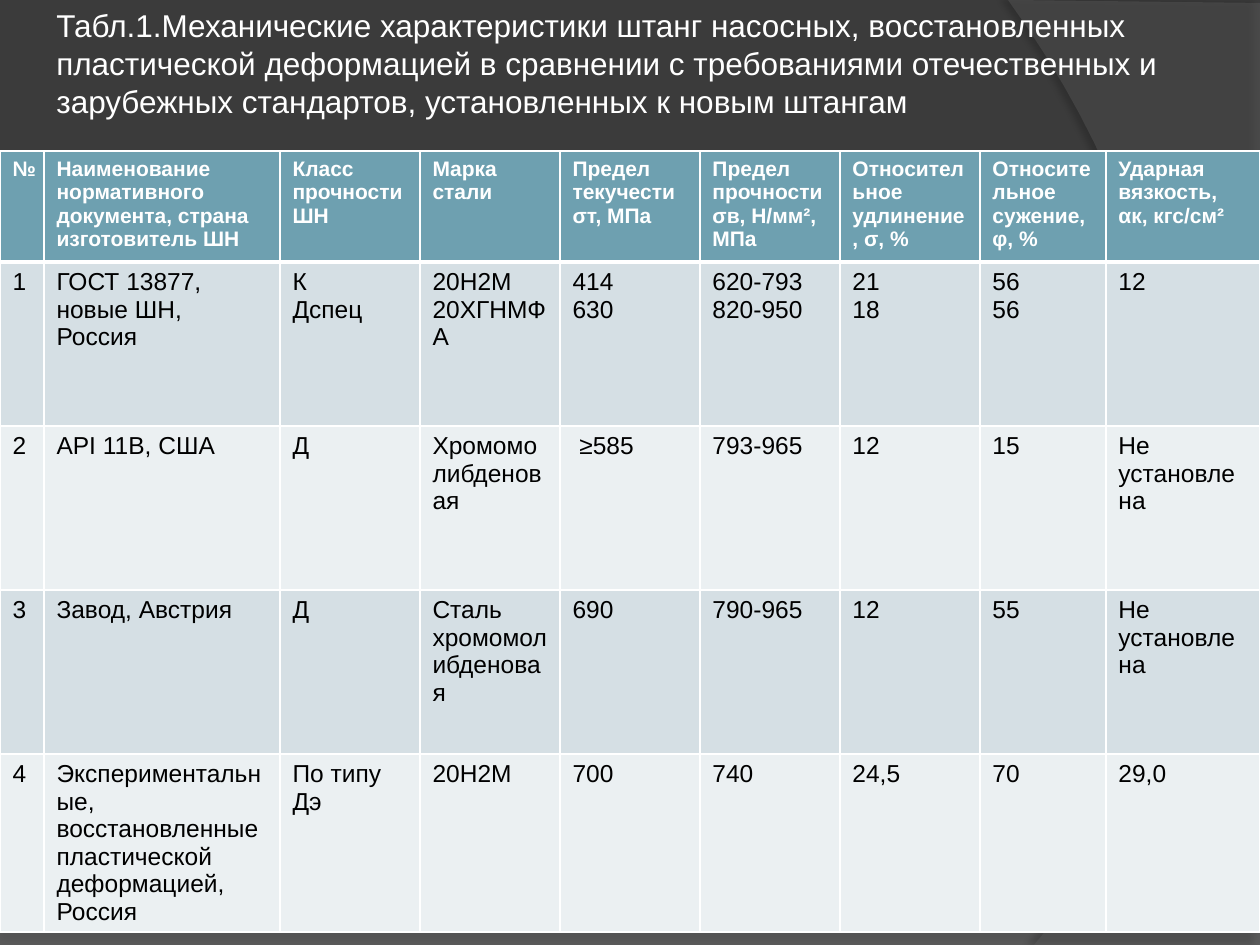
from dataclasses import dataclass

from lxml.etree import SubElement
from pptx import Presentation
from pptx.dml.color import RGBColor
from pptx.enum.text import MSO_AUTO_SIZE
from pptx.oxml.ns import qn
from pptx.util import Emu, Pt

SCALE = 914400 / 126
CURVE_STEPS = 40


@dataclass
class Backdrop:
    corners: list
    curve: list
    fill: str
    alpha: int
    shadow_alpha: int
    shadow_dist: float
    shadow_dir: int


@dataclass
class RowStyle:
    fill: str
    fmt: dict
    bottom: int = 1


BACKDROPS = [
    Backdrop([(0, 888), (0, 946), (1260, 946), (1260, 655)],
             [(704, 919), (493, 906), (0, 888)], "7F7F7F", 45, 35, 3.5, 270),
    Backdrop([(1260, 3), (1260, 945), (1034, 945)],
             [(1178, 780), (1283, 378), (1008, 0)], "5E5E5E", 40, 45, 4, 180),
]
TITLE = ("Табл.1.Механические характеристики штанг насосных, восстановленных "
         "пластической деформацией в сравнении с требованиями отечественных и "
         "зарубежных стандартов, установленных к новым штангам")
COLS = [44, 236, 140, 140, 140, 140, 140, 126, 154]
ROWS = [111, 164, 164, 164, 178]
DATA = [
    ["№", "Наименование нормативного документа, страна изготовитель ШН",
     "Класс прочности ШН", "Марка стали", "Предел текучести σт, МПа",
     "Предел прочности σв, Н/мм², МПа", "Относительное удлинение, σ, %",
     "Относительное сужение, φ, %", "Ударная вязкость, αк, кгс/см²"],
    ["1", "ГОСТ 13877, новые ШН, Россия", "К\nДспец", "20Н2М\n20ХГНМФА",
     "414\n630", "620-793\n820-950", "21\n18", "56\n56", "12"],
    ["2", "API 11B, США", "Д", "Хромомолибденовая", " ≥585", "793-965",
     "12", "15", "Не установлена"],
    ["3", "Завод, Австрия", "Д", "Сталь хромомолибденовая", "690", "790-965",
     "12", "55", "Не установлена"],
    ["4", "Экспериментальные, восстановленные пластической деформацией, Россия",
     "По типу\nДэ", "20Н2М", "700", "740", "24,5", "70", "29,0"],
]


def px(n: float) -> Emu:
    return Emu(round(n * SCALE))


def rgb(value: str) -> RGBColor:
    return RGBColor.from_string(value)


def text_format(size: int, color: str, bold: bool = False) -> dict:
    return {"size": Pt(size), "name": "Arial", "bold": bold, "color": color}


def write(tf, text: str, fmt: dict) -> None:
    tf.text = text
    for p in tf.paragraphs:
        for r in p.runs:
            for key, value in fmt.items():
                if key == "color":
                    r.font.color.rgb = rgb(value)
                else:
                    setattr(r.font, key, value)


def add_color(parent, value: str, alpha: int = 100) -> None:
    clr = SubElement(parent, qn("a:srgbClr"), val=value)
    if alpha < 100:
        SubElement(clr, qn("a:alpha"), val=str(alpha * 1000))


def bezier(p0: tuple, p1: tuple, p2: tuple, p3: tuple) -> list:
    points = []
    for i in range(1, CURVE_STEPS + 1):
        t = i / CURVE_STEPS
        u = 1 - t
        points.append(tuple(
            u**3 * a + 3 * u * u * t * b + 3 * u * t * t * c + t**3 * d
            for a, b, c, d in zip(p0, p1, p2, p3)))
    return points


def add_backdrop(s, b: Backdrop) -> None:
    points = b.corners + bezier(b.corners[-1], *b.curve)
    fb = s.shapes.build_freeform(*map(px, points[0]), scale=1.0)
    fb.add_line_segments([(px(x), px(y)) for x, y in points[1:]], close=True)
    sp = fb.convert_to_shape()
    sp.fill.solid()
    sp.fill.fore_color.rgb = rgb(b.fill)
    clr = sp.fill._xPr.find(qn("a:solidFill"))[0]
    SubElement(clr, qn("a:alpha"), val=str(b.alpha * 1000))
    sp.line.fill.background()
    sp.shadow.inherit = False
    effects = sp._element.spPr.find(qn("a:effectLst"))
    shadow = SubElement(effects, qn("a:outerShdw"), blurRad=str(Pt(4)),
                        dist=str(Pt(b.shadow_dist)),
                        dir=str(b.shadow_dir * 60000), rotWithShape="0")
    add_color(shadow, "000000", b.shadow_alpha)


def set_borders(cell, top: int, bottom: int) -> None:
    tcPr = cell._tc.get_or_add_tcPr()
    widths = {"a:lnL": 1, "a:lnR": 1, "a:lnT": top, "a:lnB": bottom}
    for i, (tag, width) in enumerate(widths.items()):
        ln = SubElement(tcPr, qn(tag), w=str(Pt(width)))
        add_color(SubElement(ln, qn("a:solidFill")), "FFFFFF")
        tcPr.insert(i, ln)


def add_data_table(s) -> None:
    table = s.shapes.add_table(len(ROWS), len(COLS), px(0), px(151),
                               px(sum(COLS)), px(sum(ROWS))).table
    for col, width in zip(table.columns, COLS):
        col.width = px(width)
    header = RowStyle("6EA0B0", text_format(12, "FFFFFF", True), 3)
    bands = [RowStyle(fill, text_format(14, "000000"))
             for fill in ("EBF0F2", "D5DFE4")]
    top = 1
    for i, (height, texts) in enumerate(zip(ROWS, DATA)):
        table.rows[i].height = px(height)
        style = bands[i % 2] if i else header
        for cell, text in zip(table.rows[i].cells, texts):
            write(cell.text_frame, text, style.fmt)
            cell.fill.solid()
            cell.fill.fore_color.rgb = rgb(style.fill)
            set_borders(cell, top, style.bottom)
        top = style.bottom


def add_title(s) -> None:
    tf = s.shapes.add_textbox(px(44), px(0), px(1131), px(127)).text_frame
    tf.word_wrap = True
    tf.auto_size = MSO_AUTO_SIZE.SHAPE_TO_FIT_TEXT
    write(tf, TITLE, text_format(18, "FFFFFF"))


def main() -> None:
    prs = Presentation()
    prs.slide_width, prs.slide_height = px(1260), px(945)
    s = prs.slides.add_slide(prs.slide_layouts[6])
    s.background.fill.solid()
    s.background.fill.fore_color.rgb = rgb("3B3B3B")
    for b in BACKDROPS:
        add_backdrop(s, b)
    add_data_table(s)
    add_title(s)
    prs.save("out.pptx")


if __name__ == "__main__":
    main()
